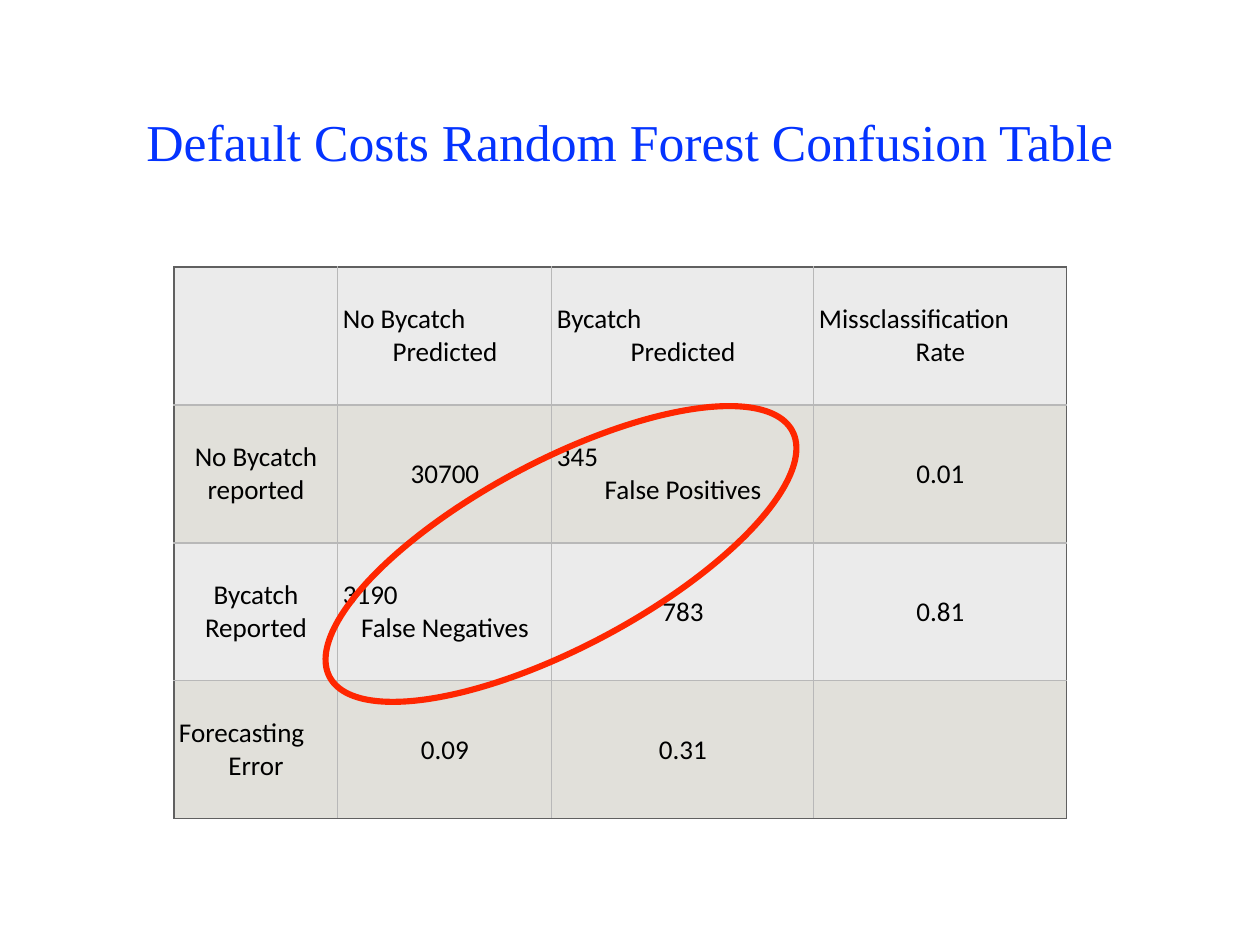
from lxml import etree
from pptx import Presentation
from pptx import util as u
from pptx.dml.color import RGBColor
from pptx.enum import shapes, text
from pptx.oxml.ns import qn

TITLE = "Default Costs Random Forest Confusion Table"
# A cell with two lines starts at the left and centres its last line.
ROWS = [
    ["", "No Bycatch\nPredicted", "Bycatch\nPredicted", "Missclassification\nRate"],
    ["No Bycatch reported", "30700", "345\nFalse Positives", "0.01"],
    ["Bycatch Reported", "3190\nFalse Negatives", "783", "0.81"],
    ["Forecasting\nError", "0.09", "0.31", ""],
]
COL_WIDTHS = [164, 214, 262, 253]
ROW_HEIGHT = 138
TABLE_LEFT, TABLE_TOP = 174, 267
TITLE_BOX = (141, 108, 978, 66)
ELLIPSE_BOX = (299, 461, 524, 186)
BANDS = ["EBEBEB", "E1E0DA"]
INNER, OUTER = "B8B8B8", "606060"
MARGIN = 5


def px(n):
    return u.Emu(round(n * 914400 / 88.6))


def rgb(color):
    return RGBColor.from_string(color)


def set_margins(box):
    box.margin_left = box.margin_right = px(MARGIN)
    box.margin_top = box.margin_bottom = px(MARGIN)


def add_run(p, words, font, size, color):
    r = p.add_run()
    r.text = words
    r.font.name, r.font.size = font, u.Pt(size)
    r.font.color.rgb = rgb(color)


def set_borders(cell, edges):
    """Draw 1 pt borders; edges pairs each side, in schema order, with a colour."""
    props = cell._tc.get_or_add_tcPr()
    for side, color in edges:
        ln = etree.SubElement(props, qn(f"a:ln{side}"), w=str(u.Pt(1)))
        fill = etree.SubElement(ln, qn("a:solidFill"))
        etree.SubElement(fill, qn("a:srgbClr"), val=color)


def add_title(s):
    sp = s.shapes.title
    sp.left, sp.top, sp.width, sp.height = map(px, TITLE_BOX)
    tf = sp.text_frame
    tf.word_wrap = False
    tf.vertical_anchor = text.MSO_ANCHOR.MIDDLE
    set_margins(tf)
    p = tf.paragraphs[0]
    p.alignment = text.PP_ALIGN.CENTER
    add_run(p, TITLE, "Times New Roman", 42, "0433FF")


def fill_cell(cell, words):
    cell.vertical_anchor = text.MSO_ANCHOR.MIDDLE
    set_margins(cell)
    tf = cell.text_frame
    lines = words.split("\n") if words else []
    for i, line in enumerate(lines):
        p = tf.add_paragraph() if i else tf.paragraphs[0]
        last = i == len(lines) - 1
        p.alignment = text.PP_ALIGN.CENTER if last else text.PP_ALIGN.LEFT
        add_run(p, line, "Calibri", 22, "000000")


def add_confusion_table(s):
    n_rows, n_cols = len(ROWS), len(COL_WIDTHS)
    table = s.shapes.add_table(
        n_rows, n_cols, px(TABLE_LEFT), px(TABLE_TOP),
        px(sum(COL_WIDTHS)), px(ROW_HEIGHT * n_rows)).table
    table.first_row = table.horz_banding = False
    for col, width in zip(table.columns, COL_WIDTHS):
        col.width = px(width)
    for i, row in enumerate(ROWS):
        table.rows[i].height = px(ROW_HEIGHT)
        for j, words in enumerate(row):
            cell = table.cell(i, j)
            fill_cell(cell, words)
            on_rim = {"L": j == 0, "R": j == n_cols - 1,
                      "T": i == 0, "B": i == n_rows - 1}
            set_borders(cell, [(side, OUTER if rim else INNER)
                               for side, rim in on_rim.items()])
            cell.fill.solid()
            cell.fill.fore_color.rgb = rgb(BANDS[i % 2])


def add_error_ellipse(s):
    sp = s.shapes.add_shape(shapes.MSO_SHAPE.OVAL, *map(px, ELLIPSE_BOX))
    sp.rotation = 332
    sp.shadow.inherit = False
    sp.fill.background()
    sp.line.color.rgb = rgb("FF2600")
    sp.line.width = u.Pt(5)


def main():
    prs = Presentation()
    prs.slide_width, prs.slide_height = px(1260), px(945)
    s = prs.slides.add_slide(prs.slide_layouts[5])
    add_confusion_table(s)
    add_title(s)
    add_error_ellipse(s)
    prs.save("out.pptx")


if __name__ == "__main__":
    main()
